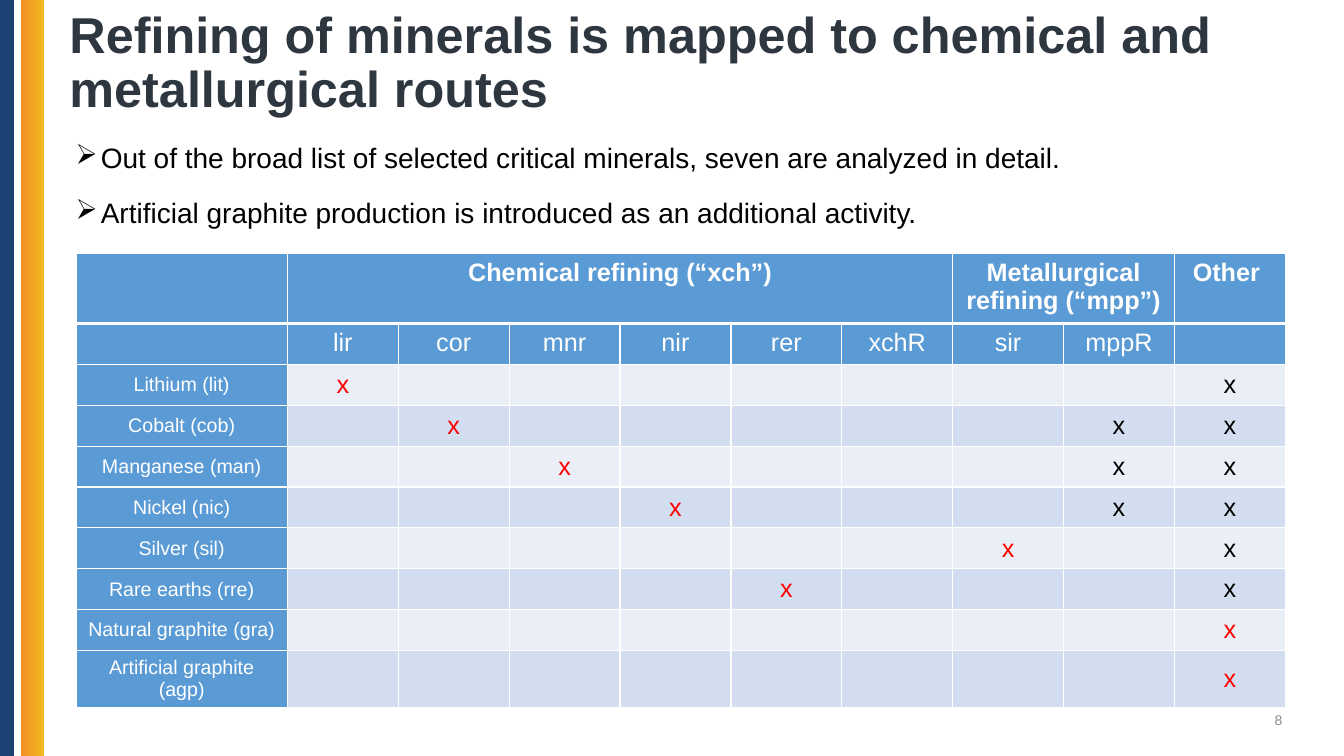
"""Build a slide that maps mineral refining to chemical and metallurgical routes."""
from dataclasses import dataclass

from lxml import etree
from pptx import Presentation
from pptx.dml.color import RGBColor
from pptx.enum.shapes import MSO_SHAPE
from pptx.enum.text import MSO_ANCHOR, PP_ALIGN
from pptx.oxml.ns import qn
from pptx.shapes.autoshape import Shape
from pptx.slide import Slide
from pptx.table import Table, _Cell
from pptx.text.text import TextFrame, _Paragraph
from pptx.util import Pt

RECTANGLE = MSO_SHAPE.RECTANGLE
TOP, MIDDLE = MSO_ANCHOR.TOP, MSO_ANCHOR.MIDDLE
LEFT, CENTER, RIGHT = PP_ALIGN.LEFT, PP_ALIGN.CENTER, PP_ALIGN.RIGHT


@dataclass(frozen=True)
class Theme:
    font: str = "Arial"
    navy: str = "1B4273"
    orange: str = "F38F22"
    amber: str = "F1BA20"
    title: str = "2E3640"
    text: str = "000000"
    white: str = "FFFFFF"
    page: str = "8C8C8C"
    header: str = "5B9BD5"
    bands: tuple[str, str] = ("EAEFF7", "D2DEEF")
    dedicated: str = "FF0000"
    title_size: int = 36
    bullet_size: int = 20
    table_size: int = 18
    mineral_size: int = 14
    page_size: int = 10


@dataclass(frozen=True)
class Box:
    left: float
    top: float
    width: float
    height: float


@dataclass(frozen=True)
class Style:
    size: int
    color: str
    bold: bool = False


@dataclass(frozen=True)
class RouteGroup:
    name: str
    routes: tuple[str, ...]


@dataclass(frozen=True)
class Mineral:
    name: str
    dedicated: str
    shared: tuple[str, ...] = ()


THEME = Theme()
SLIDE_WIDTH, SLIDE_HEIGHT = 960, 540
NAVY_STRIPE = Box(0, 0, 10, SLIDE_HEIGHT)
GOLD_STRIPE = Box(15.2, 0, 16.6, SLIDE_HEIGHT)
TITLE_BOX = Box(42.5, 2.2, 864, 87)
BULLET_BOX = Box(54, 99.4, 786, 75)
PAGE_BOX = Box(707, 500.5, 216, 28.8)
TABLE_LEFT, TABLE_TOP = 54.3, 181.1
MINERAL_WIDTH, ROUTE_WIDTH = 151, 79.2
HEADER_HEIGHT, ROW_HEIGHT, LAST_HEIGHT = 50, 29.2, 40.8
THIN, THICK = 1, 3
BULLET_INDENT = 18

OTHER = ""
GROUPS = (
    RouteGroup("Chemical refining (“xch”)", ("lir", "cor", "mnr", "nir", "rer", "xchR")),
    RouteGroup("Metallurgical refining (“mpp”)", ("sir", "mppR")),
    RouteGroup("Other ", (OTHER,)),
)
ROUTES = [route for group in GROUPS for route in group.routes]
MINERALS = (
    Mineral("Lithium (lit)", "lir", (OTHER,)),
    Mineral("Cobalt (cob)", "cor", ("mppR", OTHER)),
    Mineral("Manganese (man)", "mnr", ("mppR", OTHER)),
    Mineral("Nickel (nic)", "nir", ("mppR", OTHER)),
    Mineral("Silver (sil)", "sir", (OTHER,)),
    Mineral("Rare earths (rre)", "rer", (OTHER,)),
    Mineral("Natural graphite (gra)", OTHER),
    Mineral("Artificial graphite (agp)", OTHER),
)
BULLETS = (
    "Out of the broad list of selected critical minerals, seven are analyzed in detail.",
    "Artificial graphite production is introduced as an additional activity.",
)


def rgb(color: str) -> RGBColor:
    return RGBColor.from_string(color)


def add_run(paragraph: _Paragraph, text: str, style: Style) -> None:
    run = paragraph.add_run()
    run.text = text
    run.font.name = THEME.font
    run.font.size = Pt(style.size)
    run.font.bold = style.bold
    run.font.color.rgb = rgb(style.color)


def add_stripe(slide: Slide, box: Box) -> Shape:
    shape = slide.shapes.add_shape(
        RECTANGLE, Pt(box.left), Pt(box.top), Pt(box.width), Pt(box.height))
    shape.shadow.inherit = False
    shape.line.fill.background()
    return shape


def add_stripes(slide: Slide) -> None:
    navy_fill = add_stripe(slide, NAVY_STRIPE).fill
    navy_fill.solid()
    navy_fill.fore_color.rgb = rgb(THEME.navy)
    gold_fill = add_stripe(slide, GOLD_STRIPE).fill
    gold_fill.gradient()
    gold_fill.gradient_angle = 0
    for position, (stop, color) in enumerate(
            zip(gold_fill.gradient_stops, (THEME.orange, THEME.amber))):
        stop.position = position
        stop.color.rgb = rgb(color)


def add_text_box(slide: Slide, box: Box, anchor: MSO_ANCHOR) -> TextFrame:
    shape = slide.shapes.add_textbox(
        Pt(box.left), Pt(box.top), Pt(box.width), Pt(box.height))
    frame = shape.text_frame
    frame.word_wrap = True
    frame.vertical_anchor = anchor
    return frame


def add_line(slide: Slide, box: Box, text: str, style: Style, align: PP_ALIGN) -> None:
    paragraph = add_text_box(slide, box, MIDDLE).paragraphs[0]
    paragraph.alignment = align
    paragraph.line_spacing = 0.9
    add_run(paragraph, text, style)


def add_bullets(slide: Slide) -> None:
    frame = add_text_box(slide, BULLET_BOX, TOP)
    frame.margin_left = frame.margin_right = 0
    for index, text in enumerate(BULLETS):
        paragraph = frame.add_paragraph() if index else frame.paragraphs[0]
        properties = paragraph._p.get_or_add_pPr()
        properties.set("marL", str(Pt(BULLET_INDENT)))
        properties.set("indent", str(-Pt(BULLET_INDENT)))
        etree.SubElement(properties, qn("a:buChar")).set("char", "➢")
        paragraph.line_spacing = 0.9
        if index:
            paragraph.space_before = Pt(18)
        add_run(paragraph, text, Style(THEME.bullet_size, THEME.text))


def format_cell(cell: _Cell, fill: str, top: int = THIN, bottom: int = THIN) -> None:
    properties = cell._tc.get_or_add_tcPr()
    for side, width in (("L", THIN), ("R", THIN), ("T", top), ("B", bottom)):
        line = etree.SubElement(properties, qn(f"a:ln{side}"), w=str(Pt(width)))
        solid = etree.SubElement(line, qn("a:solidFill"))
        etree.SubElement(solid, qn("a:srgbClr"), val=THEME.white)
    cell.fill.solid()
    cell.fill.fore_color.rgb = rgb(fill)


def write_cell(cell: _Cell, text: str, style: Style, anchor: MSO_ANCHOR = MIDDLE) -> None:
    cell.vertical_anchor = anchor
    paragraph = cell.text_frame.paragraphs[0]
    paragraph.alignment = CENTER
    if text:
        add_run(paragraph, text, style)


def fill_headers(table: Table) -> None:
    for column in range(len(ROUTES) + 1):
        format_cell(table.cell(0, column), THEME.header, bottom=THICK)
        format_cell(table.cell(1, column), THEME.header, top=THICK)
    first = 1
    for group in GROUPS:
        last = first + len(group.routes) - 1
        if last > first:
            table.cell(0, first).merge(table.cell(0, last))
        write_cell(table.cell(0, first), group.name,
                   Style(THEME.table_size, THEME.white, True), TOP)
        first = last + 1
    for column, route in enumerate(ROUTES, 1):
        write_cell(table.cell(1, column), route, Style(THEME.table_size, THEME.white), TOP)


def fill_minerals(table: Table) -> None:
    for index, mineral in enumerate(MINERALS):
        name_cell = table.cell(index + 2, 0)
        format_cell(name_cell, THEME.header)
        write_cell(name_cell, mineral.name, Style(THEME.mineral_size, THEME.white))
        for column, route in enumerate(ROUTES, 1):
            cell = table.cell(index + 2, column)
            format_cell(cell, THEME.bands[index % 2])
            is_dedicated = route == mineral.dedicated
            mark = "x" if is_dedicated or route in mineral.shared else ""
            color = THEME.dedicated if is_dedicated else THEME.text
            write_cell(cell, mark, Style(THEME.table_size, color))


def add_route_table(slide: Slide) -> None:
    widths = [MINERAL_WIDTH] + [ROUTE_WIDTH] * len(ROUTES)
    heights = [HEADER_HEIGHT] + [ROW_HEIGHT] * len(MINERALS) + [LAST_HEIGHT]
    table = slide.shapes.add_table(
        len(heights), len(widths), Pt(TABLE_LEFT), Pt(TABLE_TOP),
        Pt(sum(widths)), Pt(sum(heights))).table
    table.first_row = table.horz_banding = False
    for column, width in zip(table.columns, widths):
        column.width = Pt(width)
    for row, height in zip(table.rows, heights):
        row.height = Pt(height)
    fill_headers(table)
    fill_minerals(table)


def main() -> None:
    presentation = Presentation()
    presentation.slide_width, presentation.slide_height = Pt(SLIDE_WIDTH), Pt(SLIDE_HEIGHT)
    slide = presentation.slides.add_slide(presentation.slide_layouts[6])
    add_stripes(slide)
    add_route_table(slide)
    add_line(slide, TITLE_BOX,
             "Refining of minerals is mapped to chemical and metallurgical routes",
             Style(THEME.title_size, THEME.title, True), LEFT)
    add_line(slide, PAGE_BOX, "8", Style(THEME.page_size, THEME.page), RIGHT)
    add_bullets(slide)
    presentation.save("out.pptx")


if __name__ == "__main__":
    main()
